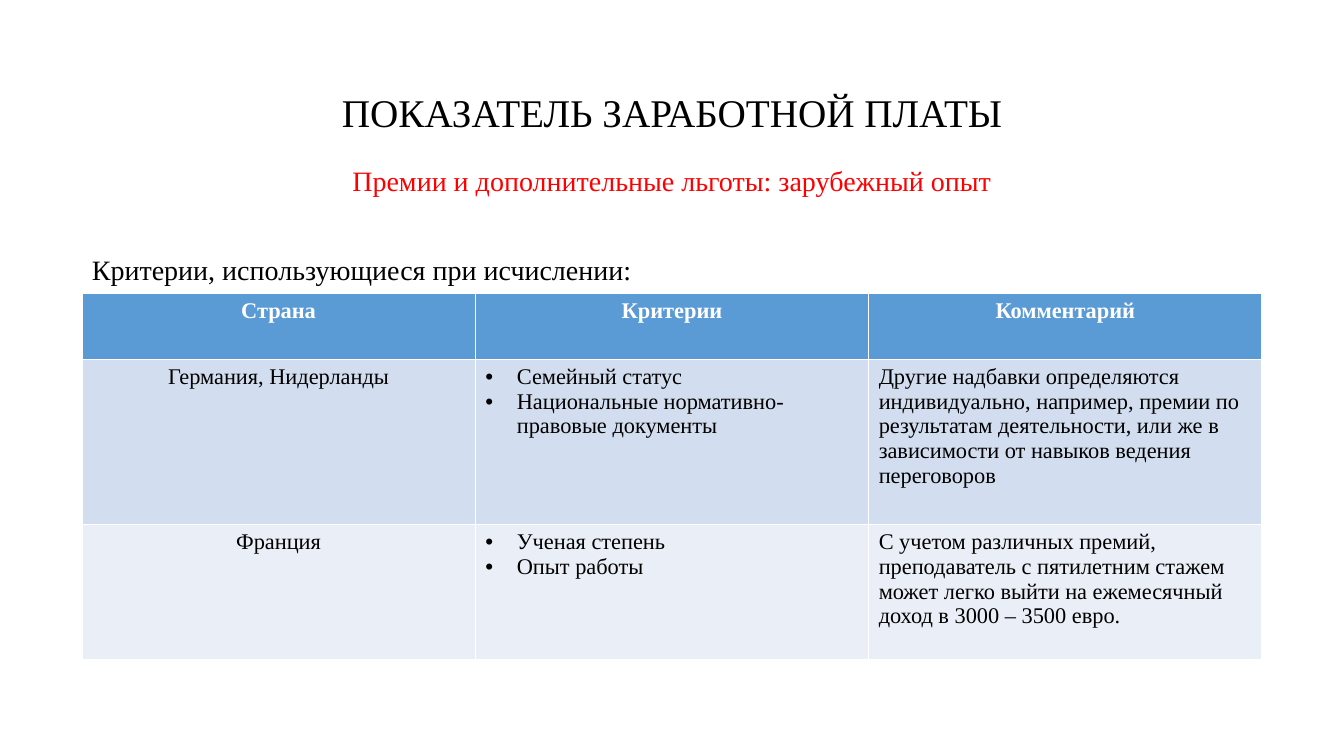
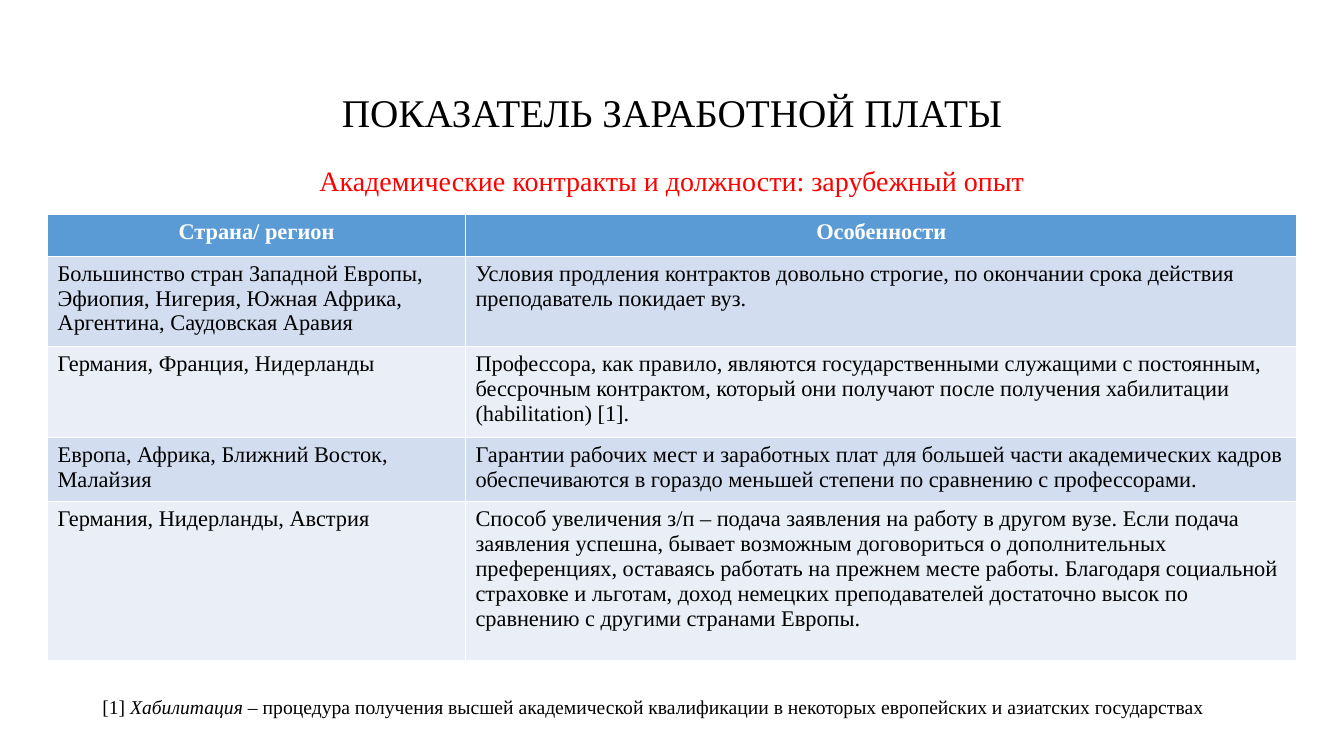
from pptx import Presentation
from pptx.dml.color import RGBColor
from pptx.enum.text import MSO_ANCHOR, PP_ALIGN
from pptx.oxml.xmlchemy import OxmlElement
from pptx.util import Pt

CENTER, LEFT = PP_ALIGN.CENTER, PP_ALIGN.LEFT
MIDDLE, TOP = MSO_ANCHOR.MIDDLE, MSO_ANCHOR.TOP

# Shared style
FONT = "Times New Roman"
BLACK, WHITE, RED = "000000", "FFFFFF", "FF0000"
HEADER_FILL = "5B9BD5"
BAND_FILLS = ("D2DEEF", "EAEFF7")
TABLE_SIZE = 16
BULLET_INDENT = 22.5
TITLE_BOX = (66, 28, 828, 104)
SUBTITLE_BOX = (131, 113, 698, 32)

# Content: a list in a cell is a bulleted list
TITLE = "ПОКАЗАТЕЛЬ ЗАРАБОТНОЙ ПЛАТЫ"
SLIDES = [
    {
        "subtitle": "Премии и дополнительные льготы: зарубежный опыт",
        "texts": [
            ((58.5, 177, 600, 32), 20, [("Критерии, использующиеся при исчислении:", False)]),
        ],
        "table": {
            "origin": (58.5, 209.5),
            "columns": (281, 281, 281),
            "heights": (47, 118, 96.5),
            "centered": (0,),
            "rows": [
                ("Страна", "Критерии", "Комментарий"),
                ("Германия, Нидерланды",
                 ["Семейный статус", "Национальные нормативно-правовые документы"],
                 "Другие надбавки определяются индивидуально, например, премии по результатам "
                 "деятельности, или же в зависимости от навыков ведения переговоров"),
                ("Франция",
                 ["Ученая степень", "Опыт работы"],
                 "С учетом различных премий, преподаватель с пятилетним стажем может легко "
                 "выйти на ежемесячный доход в 3000 – 3500 евро."),
            ],
        },
    },
    {
        "subtitle": "Академические контракты и должности: зарубежный опыт",
        "texts": [
            ((66, 492.5, 834, 24), 14, [
                ("[1] ", False),
                ("Хабилитация", True),
                (" – процедура получения высшей академической квалификации в некоторых "
                 "европейских и азиатских государствах", False),
            ]),
        ],
        "table": {
            "origin": (34, 153.5),
            "columns": (298.5, 594),
            "heights": (29.5, 60.5, 60.5, 43, 113.5),
            "centered": (),
            "rows": [
                ("Страна/ регион", "Особенности"),
                ("Большинство стран Западной Европы, Эфиопия, Нигерия, Южная Африка, "
                 "Аргентина, Саудовская Аравия",
                 "Условия продления контрактов довольно строгие, по окончании срока действия "
                 "преподаватель покидает вуз."),
                ("Германия, Франция, Нидерланды",
                 "Профессора, как правило, являются государственными служащими с постоянным, "
                 "бессрочным контрактом, который они получают после получения хабилитации "
                 "(habilitation) [1]."),
                ("Европа, Африка, Ближний Восток, Малайзия",
                 "Гарантии рабочих мест и заработных плат для большей части академических "
                 "кадров обеспечиваются в гораздо меньшей степени по сравнению с профессорами."),
                ("Германия, Нидерланды, Австрия",
                 "Способ увеличения з/п – подача заявления на работу в другом вузе. Если подача "
                 "заявления успешна, бывает возможным договориться о дополнительных "
                 "преференциях, оставаясь работать на прежнем месте работы. Благодаря социальной "
                 "страховке и льготам, доход немецких преподавателей достаточно высок по "
                 "сравнению с другими странами Европы."),
            ],
        },
    },
]


def color(value):
    return RGBColor.from_string(value)


def add_run(paragraph, text, size, text_color=BLACK, bold=False, italic=False):
    run = paragraph.add_run()
    run.text = text
    font = run.font
    font.name, font.size, font.bold, font.italic = FONT, Pt(size), bold, italic
    font.color.rgb = color(text_color)


def add_text(slide, box, size, runs, text_color=BLACK, alignment=LEFT, anchor=TOP):
    frame = slide.shapes.add_textbox(*map(Pt, box)).text_frame
    frame.word_wrap = True
    frame.vertical_anchor = anchor
    paragraph = frame.paragraphs[0]
    paragraph.alignment = alignment
    for text, italic in runs:
        add_run(paragraph, text, size, text_color, italic=italic)


def add_bullet(paragraph):
    properties = paragraph._p.get_or_add_pPr()
    properties.set("marL", str(Pt(BULLET_INDENT)))
    properties.set("indent", str(-Pt(BULLET_INDENT)))
    bullet_font = OxmlElement("a:buFont")
    bullet_font.set("typeface", "Arial")
    bullet = OxmlElement("a:buChar")
    bullet.set("char", "•")
    properties.extend((bullet_font, bullet))


def fill_cell(cell, content, is_header, centered, fill):
    cell.fill.solid()
    cell.fill.fore_color.rgb = color(fill)
    bulleted = isinstance(content, list)
    frame = cell.text_frame
    for index, text in enumerate(content if bulleted else [content]):
        paragraph = frame.add_paragraph() if index else frame.paragraphs[0]
        paragraph.alignment = CENTER if centered else LEFT
        if bulleted:
            add_bullet(paragraph)
        add_run(paragraph, text, TABLE_SIZE, WHITE if is_header else BLACK, bold=is_header)


def add_table(slide, data):
    rows, columns, heights = data["rows"], data["columns"], data["heights"]
    size = (sum(columns), sum(heights))
    table = slide.shapes.add_table(
        len(rows), len(columns), *map(Pt, data["origin"] + size)).table
    for column, width in zip(table.columns, columns):
        column.width = Pt(width)
    for row_index, (row, height) in enumerate(zip(table.rows, heights)):
        row.height = Pt(height)
        is_header = row_index == 0
        fill = HEADER_FILL if is_header else BAND_FILLS[(row_index - 1) % 2]
        for column_index, content in enumerate(rows[row_index]):
            centered = is_header or column_index in data["centered"]
            fill_cell(table.cell(row_index, column_index), content, is_header, centered, fill)


def main():
    presentation = Presentation()
    presentation.slide_width, presentation.slide_height = Pt(960), Pt(540)
    for data in SLIDES:
        slide = presentation.slides.add_slide(presentation.slide_layouts[6])
        # Heading
        add_text(slide, TITLE_BOX, 28, [(TITLE, False)], alignment=CENTER, anchor=MIDDLE)
        add_text(slide, SUBTITLE_BOX, 20, [(data["subtitle"], False)], RED, CENTER)
        # Body
        for box, size, runs in data["texts"]:
            add_text(slide, box, size, runs)
        add_table(slide, data["table"])
    presentation.save("out.pptx")


if __name__ == "__main__":
    main()
